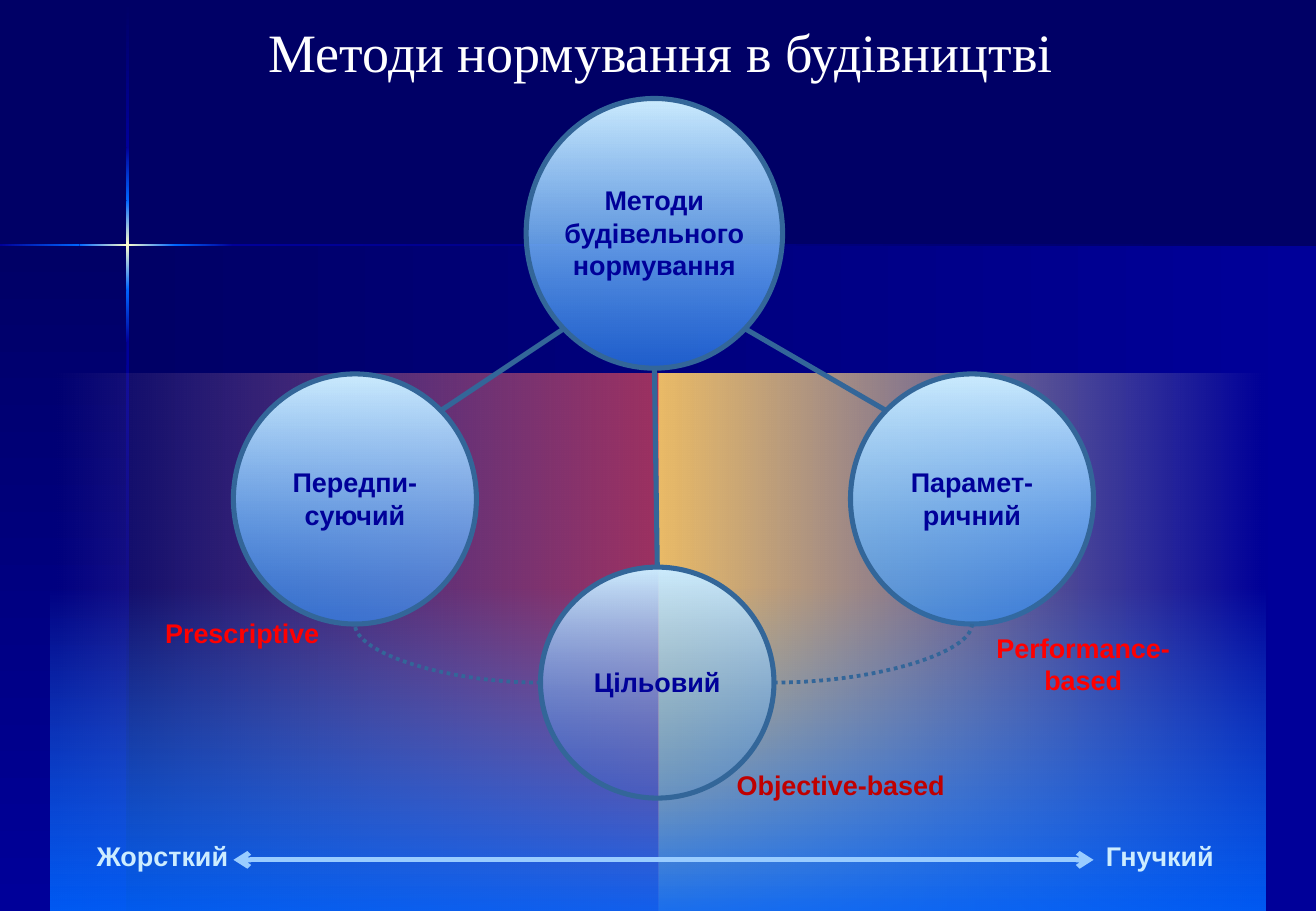
import math
from dataclasses import dataclass

import pptx
import pptx.dml.color
import pptx.enum.dml
import pptx.enum.shapes
import pptx.enum.text
import pptx.oxml
import pptx.oxml.ns
import pptx.util
from pptx.dml.color import RGBColor
from pptx.util import Cm

NAVY = RGBColor(0x00, 0x00, 0x66)
BLUE = RGBColor(0x00, 0x00, 0x99)
BRIGHT = RGBColor(0x00, 0x66, 0xFF)
CREAM = RGBColor(0xFF, 0xFF, 0xCC)
AMBER = RGBColor(0xFF, 0xCC, 0x66)
PINK = RGBColor(0xFF, 0xCC, 0xCC)
CORAL = RGBColor(0xFF, 0x50, 0x50)
SKY = RGBColor(0x33, 0x99, 0xFF)
ICE = RGBColor(0xCC, 0xEC, 0xFF)
STEEL = RGBColor(0x33, 0x66, 0x99)
ARROW = RGBColor(0x99, 0xCC, 0xFF)
RED = RGBColor(0xFF, 0x00, 0x00)
DARK_RED = RGBColor(0xC0, 0x00, 0x00)
WHITE = RGBColor(0xFF, 0xFF, 0xFF)

WIDTH, HEIGHT = 27.51, 19.05
STAR_X, STAR_Y, RAY = 2.67, 5.13, 0.05
RIGHT, DOWN = 0, 90
Point = tuple[float, float]
STRAIGHT = pptx.enum.shapes.MSO_CONNECTOR.STRAIGHT
CURVE = pptx.enum.shapes.MSO_CONNECTOR.CURVE
RECTANGLE = pptx.enum.shapes.MSO_SHAPE.RECTANGLE
OVAL = pptx.enum.shapes.MSO_SHAPE.OVAL


@dataclass(frozen=True)
class Stop:
    color: RGBColor
    opacity: int = 100


@dataclass(frozen=True)
class Box:
    left: float
    top: float
    width: float
    height: float

    def lengths(self) -> list[pptx.util.Length]:
        return [Cm(v) for v in (self.left, self.top, self.width, self.height)]

    def rim(self, degrees: float) -> Point:
        """Point on the inscribed ellipse, clockwise from the right."""
        turn = math.radians(degrees)
        return (self.left + self.width / 2 * (1 + math.cos(turn)),
                self.top + self.height / 2 * (1 + math.sin(turn)))


@dataclass(frozen=True)
class Method:
    text: str
    box: Box
    end_opacity: int


@dataclass(frozen=True)
class Label:
    text: str
    box: Box
    color: RGBColor
    size: int = 16
    font: str = "Arial"
    bold: bool = True


ROOT = Method("Методи будівельного нормування", Box(11, 2.06, 5.36, 5.64), 61)
PRESCRIPTIVE = Method("Передпи-суючий", Box(4.88, 7.82, 5.08, 5.23), 61)
PARAMETRIC = Method("Парамет-ричний", Box(17.78, 7.82, 5.08, 5.23), 61)
OBJECTIVE = Method("Цільовий", Box(11.3, 11.86, 4.88, 4.83), 5)

TITLE = Label("Методи нормування в будівництві", Box(1.12, 0, 25.4, 2.13),
              WHITE, 32, "Times New Roman", False)
LABELS = [
    Label("Гнучкий", Box(22.02, 17.35, 4.45, 1.07), ICE),
    Label("Жорсткий", Box(1.17, 17.35, 4.45, 1.07), ICE),
    Label("Prescriptive", Box(2.74, 12.7, 4.65, 1.07), RED),
    Label("Performance-based", Box(20.32, 13.34, 4.65, 1.07), RED),
    Label("Objective-based", Box(14.4, 15.88, 6.35, 1.07), DARK_RED),
]


def add_gradient(slide, kind, box: Box, start: Stop, end: Stop, angle: int):
    shape = slide.shapes.add_shape(kind, *box.lengths())
    shape.shadow.inherit = False
    shape.line.fill.background()
    shape.fill.gradient()
    gradient = shape._element.spPr.find(pptx.oxml.ns.qn("a:gradFill"))
    gradient.find(pptx.oxml.ns.qn("a:lin")).set("ang", str(angle * 60000))
    stops = gradient.find(pptx.oxml.ns.qn("a:gsLst"))
    stops.clear()
    for position, stop in ((0, start), (100000, end)):
        stops.append(pptx.oxml.parse_xml(
            f'<a:gs {pptx.oxml.ns.nsdecls("a")} pos="{position}">'
            f'<a:srgbClr val="{stop.color}">'
            f'<a:alpha val="{stop.opacity * 1000}"/></a:srgbClr></a:gs>'))
    return shape


def write(shape, label: Label) -> None:
    frame = shape.text_frame
    frame.word_wrap = True
    frame.vertical_anchor = pptx.enum.text.MSO_ANCHOR.MIDDLE
    frame.text = label.text
    paragraph = frame.paragraphs[0]
    paragraph.alignment = pptx.enum.text.PP_ALIGN.CENTER
    font = paragraph.runs[0].font
    font.name, font.size, font.bold = label.font, pptx.util.Pt(label.size), label.bold
    font.color.rgb = label.color


def add_label(slide, label: Label) -> None:
    write(slide.shapes.add_textbox(*label.box.lengths()), label)


def add_method(slide, method: Method) -> None:
    circle = add_gradient(slide, OVAL, method.box, Stop(ICE),
                          Stop(SKY, method.end_opacity), DOWN)
    circle.line.color.rgb = STEEL
    circle.line.width = pptx.util.Pt(3)
    write(circle, Label(method.text, method.box, BLUE))
    frame = circle.text_frame
    frame.margin_left = frame.margin_right = 0
    frame.margin_top, frame.margin_bottom = Cm(0.1), Cm(0.13)


def add_link(slide, start: Point, end: Point, color: RGBColor = STEEL,
             width: float = 3, kind=STRAIGHT):
    link = slide.shapes.add_connector(kind, *[Cm(v) for v in start + end])
    link.line.color.rgb = color
    link.line.width = pptx.util.Pt(width)
    link._element.spPr.append(pptx.oxml.parse_xml(
        f'<a:effectLst {pptx.oxml.ns.nsdecls("a")}/>'))
    return link


def add_dotted_curve(slide, start: Point, end: Point) -> None:
    curve = add_link(slide, start, end, width=2.25, kind=CURVE)
    curve.line.dash_style = pptx.enum.dml.MSO_LINE.ROUND_DOT
    geometry = curve._element.spPr.find(pptx.oxml.ns.qn("a:prstGeom"))
    geometry.set("prst", "curvedConnector2")


def add_backdrop(slide) -> None:
    slide.background.fill.solid()
    slide.background.fill.fore_color.rgb = NAVY
    depth = HEIGHT - STAR_Y
    for box, angle in ((Box(STAR_X, STAR_Y, WIDTH - STAR_X, depth), RIGHT),
                       (Box(0, STAR_Y, STAR_X, depth), DOWN)):
        add_gradient(slide, RECTANGLE, box, Stop(NAVY), Stop(BLUE), angle)
    # Star rays: each piece blends one colour into the next
    colors = [NAVY, BLUE, BRIGHT, CREAM, BRIGHT, BLUE, NAVY]
    rows = [0.03, 3.07, 4.19, 5.12, 6.05, 7.16, HEIGHT]
    columns = [0, 1.66, 2.66, 3.66, 4.87, WIDTH]
    for cuts, shades, angle in ((rows, colors, DOWN), (columns, colors[1:], RIGHT)):
        for begin, end, first, last in zip(cuts, cuts[1:], shades, shades[1:]):
            if angle == DOWN:
                box = Box(STAR_X - RAY / 2, begin, RAY, end - begin)
            else:
                box = Box(begin, STAR_Y - RAY / 2, end - begin, RAY)
            add_gradient(slide, RECTANGLE, box, Stop(first), Stop(last), angle)


def main() -> None:
    deck = pptx.Presentation()
    deck.slide_width, deck.slide_height = Cm(WIDTH), Cm(HEIGHT)
    slide = deck.slides.add_slide(deck.slide_layouts[6])
    add_backdrop(slide)

    # Flexible and rigid halves
    add_gradient(slide, RECTANGLE, Box(13.76, 7.82, 12.7, 11.23),
                 Stop(AMBER, 92), Stop(CREAM, 0), RIGHT)
    add_gradient(slide, RECTANGLE, Box(1.06, 7.82, 12.7, 11.23),
                 Stop(PINK, 0), Stop(CORAL, 62), RIGHT)
    add_label(slide, TITLE)

    # Methods and their links, with the glow between the layers
    add_method(slide, ROOT)
    add_method(slide, PARAMETRIC)
    add_link(slide, ROOT.box.rim(135), PRESCRIPTIVE.box.rim(315))
    add_link(slide, PARAMETRIC.box.rim(225), ROOT.box.rim(45))
    add_gradient(slide, RECTANGLE, Box(1.06, 12.27, 25.4, 6.78),
                 Stop(SKY, 0), Stop(BRIGHT, 89), DOWN)
    add_method(slide, PRESCRIPTIVE)
    add_method(slide, OBJECTIVE)
    add_link(slide, OBJECTIVE.box.rim(270), ROOT.box.rim(90))
    add_dotted_curve(slide, OBJECTIVE.box.rim(0), PARAMETRIC.box.rim(90))
    add_dotted_curve(slide, OBJECTIVE.box.rim(180), PRESCRIPTIVE.box.rim(90))

    # Scale from rigid to flexible
    scale = add_link(slide, (4.88, 17.98), (22.86, 17.98), ARROW)
    outline = scale._element.spPr.find(pptx.oxml.ns.qn("a:ln"))
    for tip in ("headEnd", "tailEnd"):
        outline.append(pptx.oxml.parse_xml(
            f'<a:{tip} {pptx.oxml.ns.nsdecls("a")} type="arrow"/>'))
    for label in LABELS:
        add_label(slide, label)

    deck.save("out.pptx")


if __name__ == "__main__":
    main()
